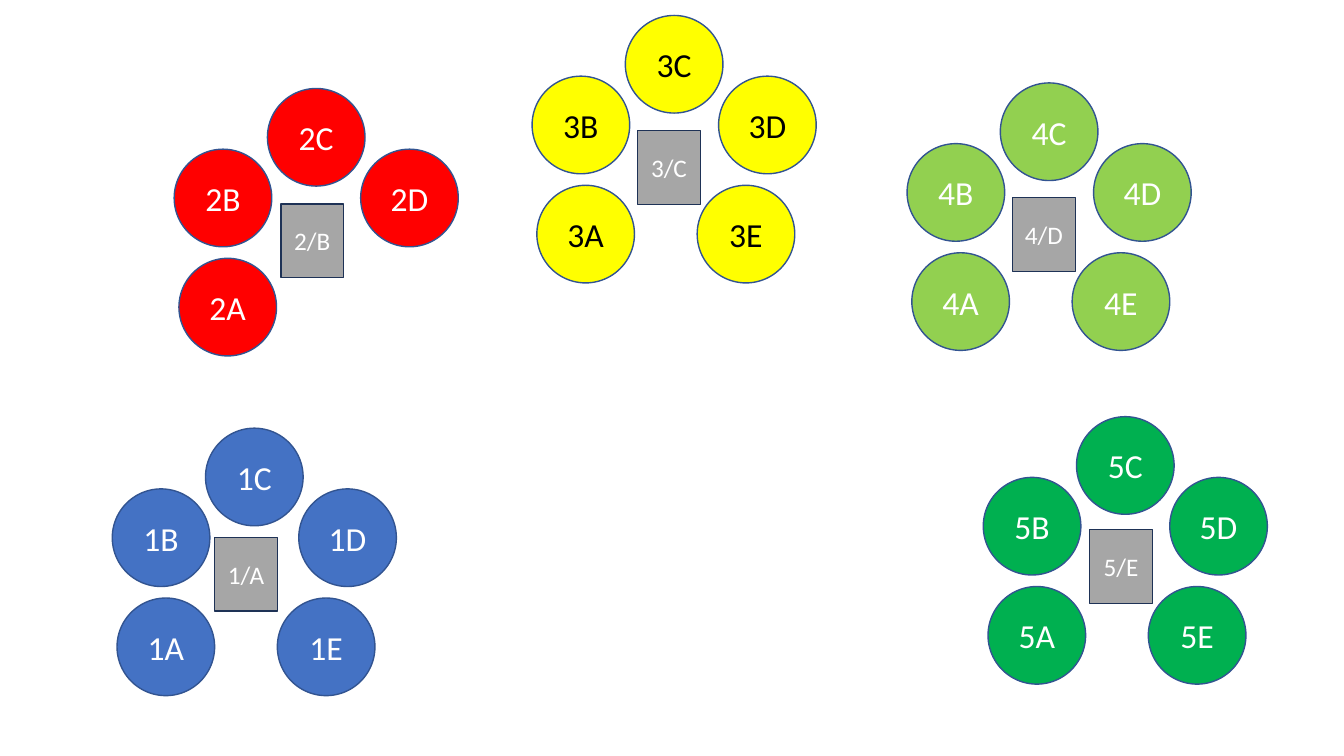
from pptx import Presentation
from pptx.dml.color import RGBColor
from pptx.enum.shapes import MSO_SHAPE
from pptx.enum.text import MSO_ANCHOR, PP_ALIGN
from pptx.util import Cm, Pt

COLOURS = {
    "blue": "4472C4",
    "red": "FF0000",
    "yellow": "FFFF00",
    "lime": "92D050",
    "green": "00B050",
    "grey": "A6A6A6",
    "seat line": "325491",
    "desk line": "1E3256",
    "white": "FFFFFF",
    "black": "000000",
}
FONT = "Calibri"
SEAT_DIAMETER = 2.46
DESK_WIDTH, DESK_HEIGHT = 1.58, 1.86
SEAT_OFFSETS = {
    "A": (0.12, 4.28),
    "B": (0, 1.53),
    "C": (2.35, 0),
    "D": (4.7, 1.53),
    "E": (4.16, 4.28),
}
GROUPS = [
    ("1", "ABCDE", "blue", "white", (2.83, 10.79), (2.58, 2.75)),
    ("2", "ABCD", "red", "white", (4.39, 2.23), (2.69, 2.91)),
    ("3", "ABCDE", "yellow", "black", (13.41, 0.39), (2.66, 2.9)),
    ("4", "ABCDE", "lime", "white", (22.86, 2.09), (2.66, 2.89)),
    ("5", "ABCDE", "green", "white", (24.78, 10.5), (2.68, 2.85)),
]


def colour(name):
    """Return the named colour."""
    return RGBColor.from_string(COLOURS[name])


def add_label_shape(slide, kind, box, label, size, fill, line, text_colour):
    """Add a filled shape with a centred label in the given box."""
    shape = slide.shapes.add_shape(kind, *(Cm(length) for length in box))
    shape.shadow.inherit = False
    shape.fill.solid()
    shape.fill.fore_color.rgb = colour(fill)
    shape.line.color.rgb = colour(line)
    shape.line.width = Pt(1)
    shape.text_frame.vertical_anchor = MSO_ANCHOR.MIDDLE
    paragraph = shape.text_frame.paragraphs[0]
    paragraph.alignment = PP_ALIGN.CENTER
    run = paragraph.add_run()
    run.text = label
    run.font.name = FONT
    run.font.size = Pt(size)
    run.font.color.rgb = colour(text_colour)


def add_group(slide, number, seats, fill, text_colour, corner, desk_offset):
    """Add one group of round seats about its desk, measured from its corner."""
    left, top = corner
    for seat in seats:
        across, down = SEAT_OFFSETS[seat]
        box = (left + across, top + down, SEAT_DIAMETER, SEAT_DIAMETER)
        add_label_shape(slide, MSO_SHAPE.OVAL, box, number + seat, 24,
                        fill, "seat line", text_colour)
    across, down = desk_offset
    box = (left + across, top + down, DESK_WIDTH, DESK_HEIGHT)
    desk_label = f"{number}/{'ABCDE'[int(number) - 1]}"
    add_label_shape(slide, MSO_SHAPE.RECTANGLE, box, desk_label, 18,
                    "grey", "desk line", "white")


def main():
    """Build the seating plan and save it."""
    presentation = Presentation()
    presentation.slide_width = Cm(33.87)
    presentation.slide_height = Cm(19.05)
    slide = presentation.slides.add_slide(presentation.slide_layouts[6])
    for group in GROUPS:
        add_group(slide, *group)
    presentation.save("out.pptx")


if __name__ == "__main__":
    main()
